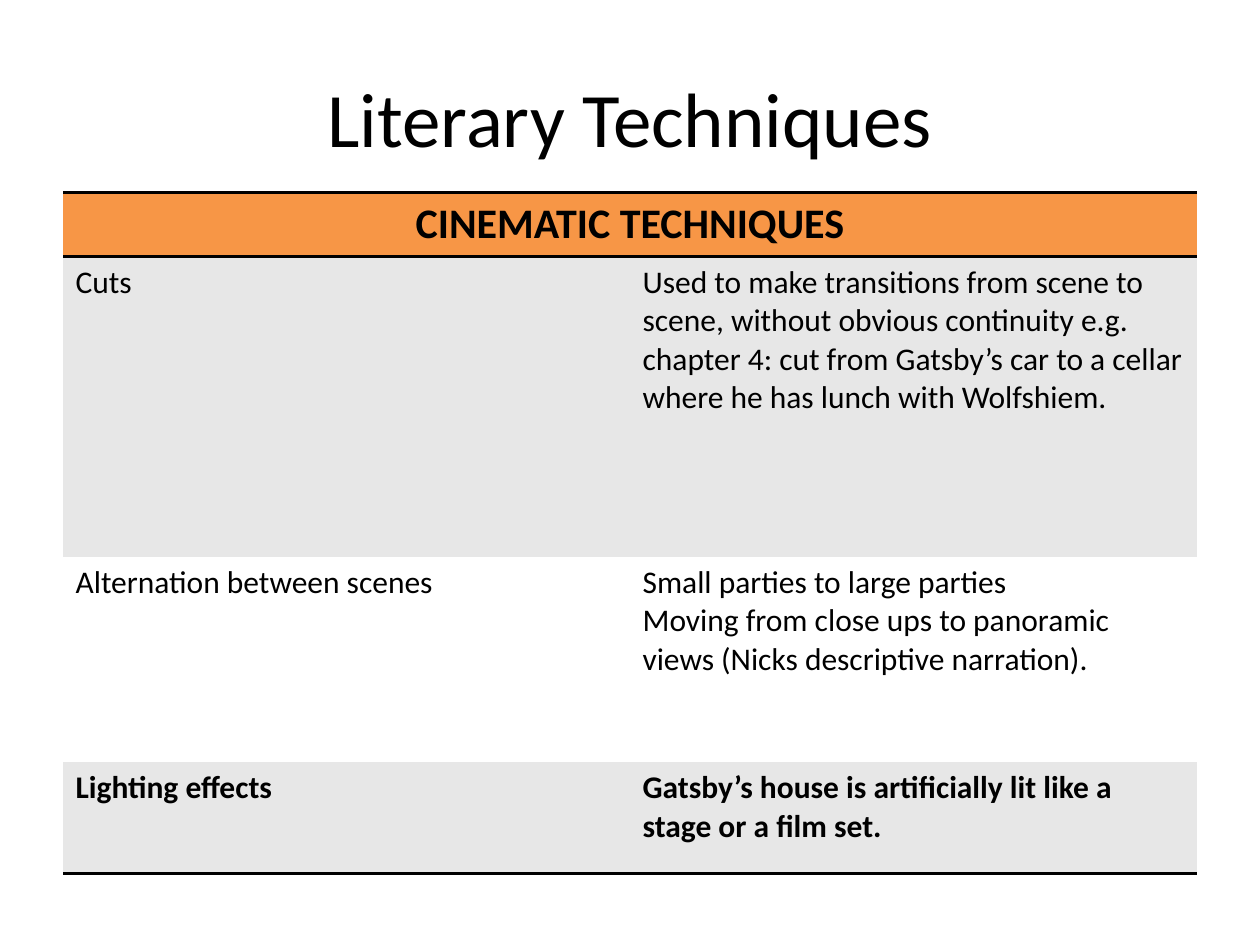
from lxml import etree
from pptx import Presentation
from pptx.dml.color import RGBColor
from pptx.enum import text as t
from pptx.oxml import ns
from pptx.util import Cm, Pt

BLACK = RGBColor(0, 0, 0)
ORANGE = RGBColor(0xF7, 0x96, 0x46)
GREY = RGBColor(0xE7, 0xE7, 0xE7)
WHITE = RGBColor(255, 255, 255)
PLAIN = "{2D5ABB26-0587-4C30-8999-92F81FD0307C}"

HEIGHTS = (1.3, 6.05, 4.14, 2.24)
ROWS = (
    ("Cuts",
     "Used to make transitions from scene to scene, without obvious continuity "
     "e.g. chapter 4: cut from Gatsby’s car to a cellar where he has lunch with Wolfshiem."),
    ("Alternation between scenes",
     "Small parties to large parties\n"
     "Moving from close ups to panoramic views (Nicks descriptive narration)."),
    ("Lighting effects",
     "Gatsby’s house is artificially lit like a stage or a film set."),
)


def style(frame, size, bold=False, align=t.PP_ALIGN.LEFT):
    form = {"name": "Calibri", "size": Pt(size), "bold": bold}
    for para in frame.paragraphs:
        para.alignment = align
        for run in para.runs:
            for key, val in form.items():
                setattr(run.font, key, val)
            run.font.color.rgb = BLACK


def rule(cell, side):
    props = cell._tc.get_or_add_tcPr()
    line = etree.Element(ns.qn("a:ln" + side), w=str(Pt(2)))
    fill = etree.SubElement(line, ns.qn("a:solidFill"))
    etree.SubElement(fill, ns.qn("a:srgbClr"), val=str(BLACK))
    props.insert(0, line)


def paint(cell, color, sides=""):
    cell.fill.solid()
    cell.fill.fore_color.rgb = color
    for side in sides:
        rule(cell, side)


def add_title(slide, words):
    title = slide.shapes.title
    place = {"left": Cm(1.27), "top": Cm(0.76), "width": Cm(22.86), "height": Cm(3.18)}
    for key, val in place.items():
        setattr(title, key, val)
    frame = title.text_frame
    frame.text = words
    frame.vertical_anchor = t.MSO_ANCHOR.MIDDLE
    style(frame, 44, align=t.PP_ALIGN.CENTER)


def add_grid(slide, head, rows):
    shape = slide.shapes.add_table(
        len(rows) + 1, 2, Cm(1.27), Cm(3.88), Cm(22.86), Cm(sum(HEIGHTS)))
    grid = shape.table
    grid.first_row = grid.horz_banding = False
    next(shape.element.iter(ns.qn("a:tableStyleId"))).text = PLAIN
    for row, high in zip(grid.rows, HEIGHTS):
        row.height = Cm(high)

    top = grid.cell(0, 0)
    top.merge(grid.cell(0, 1))
    top.text = head
    style(top.text_frame, 24, True, t.PP_ALIGN.CENTER)
    for col in range(2):
        paint(grid.cell(0, col), ORANGE, "BT")

    for num, pair in enumerate(rows, 1):
        last = num == len(rows)
        for col, words in enumerate(pair):
            cell = grid.cell(num, col)
            cell.text = words
            style(cell.text_frame, 18, last)
            paint(cell, GREY if num % 2 else WHITE, "B" if last else "")


def main():
    deck = Presentation()
    deck.slide_width, deck.slide_height = Cm(25.4), Cm(19.05)
    slide = deck.slides.add_slide(deck.slide_layouts[5])
    add_title(slide, "Literary Techniques")
    add_grid(slide, "CINEMATIC TECHNIQUES", ROWS)
    deck.save("out.pptx")


if __name__ == "__main__":
    main()
